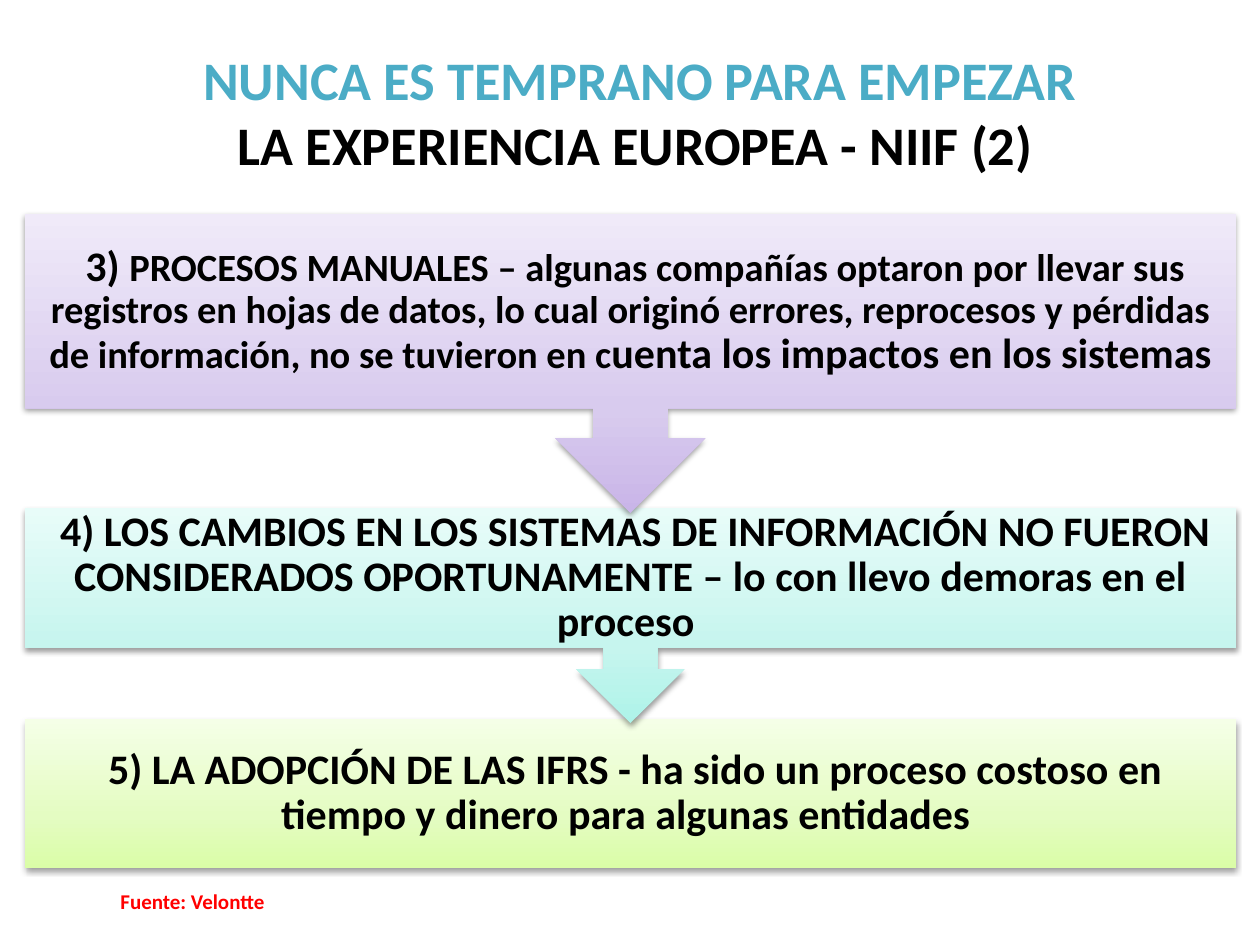
from copy import deepcopy
from dataclasses import dataclass

from lxml.etree import SubElement
from pptx import Presentation
from pptx.dml.color import RGBColor
from pptx.enum.shapes import MSO_SHAPE
from pptx.enum.text import MSO_ANCHOR, PP_ALIGN
from pptx.oxml.ns import qn
from pptx.util import Emu, Pt

SCALE = 914400 / 126


@dataclass(frozen=True)
class Theme:
    font: str = "Calibri"
    ink: str = "000000"
    accent: str = "4BACC6"
    source: str = "FF0000"
    purple: tuple = ("C9B5E8", "D8CBEE", "F0EAF9")
    teal: tuple = ("AEF3E9", "C6F5EE", "E8FCF9")
    lime: tuple = ("DAFDA7", "E4FCC2", "F5FFE7")
    stops: tuple = (0, 0.35, 1)
    title_size: int = 31
    step_size: int = 24
    detail_size: int = 22
    source_size: int = 12


THEME = Theme()


def px(length):
    return Emu(round(length * SCALE))


def add_span(para, text, size, color):
    span = para.add_run()
    span.text = text
    span.font.name = THEME.font
    span.font.size = Pt(size)
    span.font.bold = True
    span.font.color.rgb = RGBColor.from_string(color)


def centered_para(frame, inset_x, inset_y):
    frame.word_wrap = True
    frame.vertical_anchor = MSO_ANCHOR.MIDDLE
    frame.margin_left = frame.margin_right = px(inset_x)
    frame.margin_top = frame.margin_bottom = px(inset_y)
    para = frame.paragraphs[0]
    para.alignment = PP_ALIGN.CENTER
    return para


def add_text_box(page, left, top, width, height):
    box = page.shapes.add_textbox(px(left), px(top), px(width), px(height))
    return centered_para(box.text_frame, 13, 6)


def fill_gradient(shape, colors):
    shape.fill.gradient()
    shape.fill.gradient_angle = 90
    stop_list = shape.element.spPr.find(qn("a:gradFill")).find(qn("a:gsLst"))
    stop_list.append(deepcopy(stop_list[0]))
    for stop, position, color in zip(shape.fill.gradient_stops, THEME.stops, colors):
        stop.position = position
        stop.color.rgb = RGBColor.from_string(color)


def add_soft_shadow(shape):
    shape.shadow.inherit = False
    effects = shape.element.spPr.find(qn("a:effectLst"))
    shadow = SubElement(effects, qn("a:outerShdw"), blurRad="40000", dist="20000",
                        dir="5400000", rotWithShape="0")
    color = SubElement(shadow, qn("a:srgbClr"), val="000000")
    SubElement(color, qn("a:alpha"), val="38000")


def add_step(page, kind, top, height, colors, spans):
    step = page.shapes.add_shape(kind, px(25), px(top), px(1211), px(height))
    fill_gradient(step, colors)
    step.line.fill.background()
    add_soft_shadow(step)
    para = centered_para(step.text_frame, 24, 24)
    para.line_spacing = 0.9
    for text, size in spans:
        add_span(para, text, size, THEME.ink)


def add_title(page):
    para = add_text_box(page, 64, 37, 1142, 149)
    add_span(para, " ", THEME.step_size, THEME.accent)
    add_span(para, "NUNCA ES TEMPRANO PARA EMPEZAR", THEME.title_size, THEME.accent)
    para.add_line_break()
    add_span(para, "LA EXPERIENCIA EUROPEA - NIIF (2)", THEME.title_size, THEME.ink)


def add_source(page):
    para = add_text_box(page, 54, 876, 277, 50)
    add_span(para, "Fuente: Velontte", THEME.source_size, THEME.source)


def main():
    deck = Presentation()
    deck.slide_width, deck.slide_height = px(1260), px(945)
    page = deck.slides.add_slide(deck.slide_layouts[6])
    callout = MSO_SHAPE.DOWN_ARROW_CALLOUT
    large, small = THEME.step_size, THEME.detail_size
    add_step(page, MSO_SHAPE.RECTANGLE, 719, 149, THEME.lime, [
        (" 5) LA ADOPCIÓN DE LAS IFRS - ha sido un proceso costoso en "
         "tiempo y dinero para algunas entidades ", large),
    ])
    add_step(page, callout, 508, 215, THEME.teal, [
        (" 4) LOS CAMBIOS EN LOS SISTEMAS DE INFORMACIÓN NO FUERON CONSIDERADOS "
         "OPORTUNAMENTE – lo con llevo demoras en el proceso ", large),
    ])
    add_step(page, callout, 214, 299, THEME.purple, [
        (" 3) ", large),
        ("PROCESOS MANUALES – algunas compañías optaron por llevar sus registros "
         "en hojas de datos, lo cual originó errores, reprocesos y pérdidas de "
         "información, no se tuvieron en c", small),
        ("uenta los impactos en los sistemas", large),
    ])
    add_title(page)
    add_source(page)
    deck.save("out.pptx")


if __name__ == "__main__":
    main()
